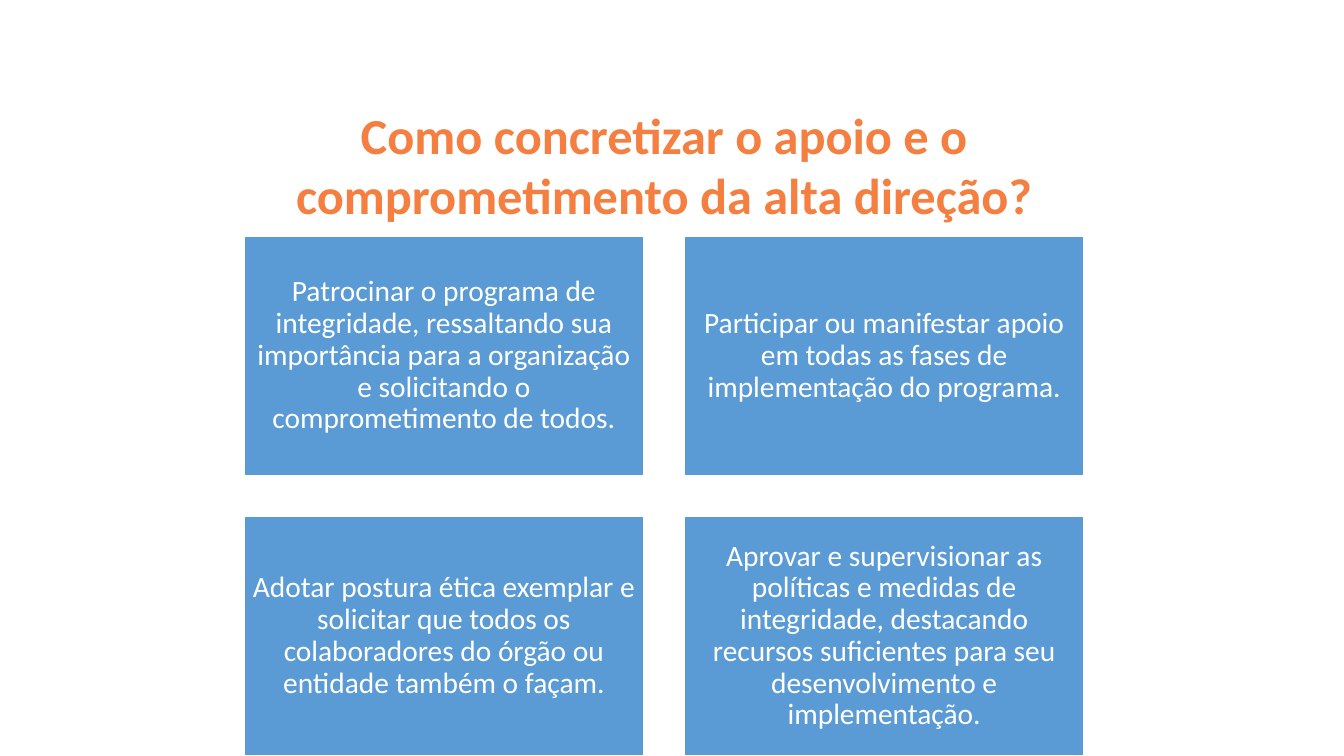
from pptx import Presentation
from pptx.dml.color import RGBColor as Rgb
from pptx.enum.shapes import MSO_SHAPE as Shape
from pptx.enum.text import MSO_ANCHOR as Anchor, PP_ALIGN as Align
from pptx.util import Pt

COLORS = {"title": "F47F40", "card": "5B9BD5", "white": "FFFFFF"}
TITLE = "Como concretizar o apoio e o comprometimento da alta direção?"
CARDS = [
    "Patrocinar o programa de integridade, ressaltando sua importância "
    "para a organização e solicitando o comprometimento de todos.",
    "Participar ou manifestar apoio em todas as fases de implementação do programa.",
    "Adotar postura ética exemplar e solicitar que todos os colaboradores "
    "do órgão ou entidade também o façam.",
    "Aprovar e supervisionar as políticas e medidas de integridade, destacando "
    "recursos suficientes para seu desenvolvimento e implementação.",
]
LEFT, TOP = 174.2, 168.5
WIDTH, HEIGHT = 285.8, 171.4
GAP = 28.7


def color(name):
    return Rgb.from_string(COLORS[name])


def write(frame, text, size, tint, bold=False, font="Calibri",
          anchor=Anchor.TOP, spacing=None, inset=None):
    frame.word_wrap = True
    frame.vertical_anchor = anchor
    if inset is not None:
        frame.margin_left = frame.margin_right = Pt(inset)
        frame.margin_top = frame.margin_bottom = Pt(inset)
    para = frame.paragraphs[0]
    para.alignment = Align.CENTER
    para.line_spacing = spacing
    run = para.add_run()
    run.text = text
    run.font.name = font
    run.font.size = Pt(size)
    run.font.bold = bold
    run.font.color.rgb = color(tint)


class Deck:
    def __init__(self, width, height):
        self.show = Presentation()
        self.show.slide_width = Pt(width)
        self.show.slide_height = Pt(height)
        self.slide = self.show.slides.add_slide(self.show.slide_layouts[6])

    def title(self, text, *area):
        box = self.slide.shapes.add_textbox(*map(Pt, area))
        write(box.text_frame, text, 36, "title", bold=True)

    def card(self, text, *area):
        box = self.slide.shapes.add_shape(Shape.RECTANGLE, *map(Pt, area))
        box.shadow.inherit = False
        box.fill.solid()
        box.fill.fore_color.rgb = color("card")
        box.line.color.rgb = color("white")
        box.line.width = Pt(1)
        write(box.text_frame, text, 21, "white", anchor=Anchor.MIDDLE,
              spacing=0.9, inset=6.3)


def main():
    deck = Deck(960, 540)
    deck.title(TITLE, 124.5, 70.5, 700, 116.6)
    for i, text in enumerate(CARDS):
        row, col = divmod(i, 2)
        deck.card(text, LEFT + col * (WIDTH + GAP),
                  TOP + row * (HEIGHT + GAP), WIDTH, HEIGHT)
    deck.show.save("out.pptx")


if __name__ == "__main__":
    main()
